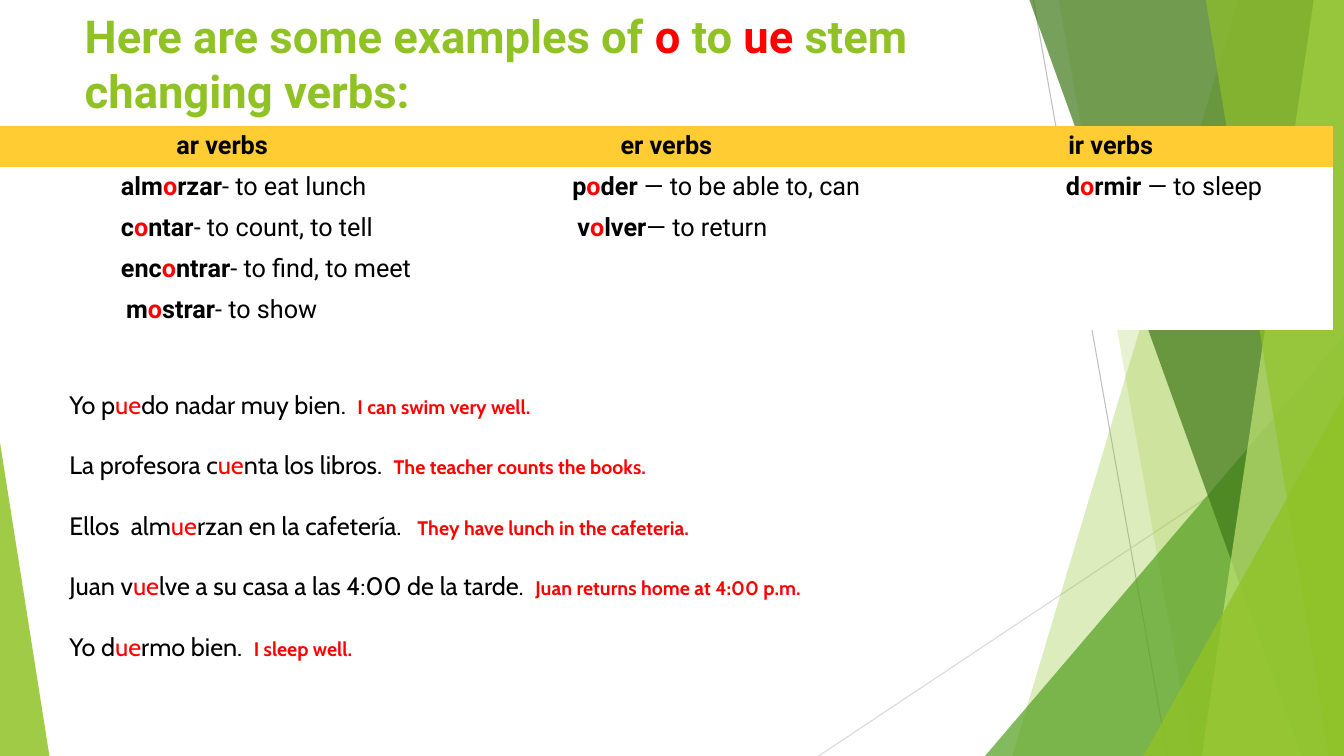
from dataclasses import dataclass

from lxml import etree
from pptx import Presentation
from pptx import util as u
from pptx.dml.color import RGBColor
from pptx.enum import shapes, text
from pptx.oxml.ns import qn

GREEN = RGBColor(0x90, 0xC2, 0x26)
MID_GREEN = RGBColor(0x54, 0xA0, 0x21)
DARK_GREEN = RGBColor(0x3F, 0x78, 0x19)
PALE_GREEN = RGBColor(0xC0, 0xE4, 0x74)
RED = RGBColor(0xFF, 0x00, 0x00)
BLACK = RGBColor(0x00, 0x00, 0x00)
WHITE = RGBColor(0xFF, 0xFF, 0xFF)
AMBER = RGBColor(0xFF, 0xCC, 0x33)
LIGHT_GREY = RGBColor(0xD9, 0xD9, 0xD9)
GREY = RGBColor(0xBF, 0xBF, 0xBF)

WIDTH, HEIGHT = 13.33, 7.5
NO_GRID_STYLE = "{2D5ABB26-0587-4C30-8999-92F81FD0307C}"


@dataclass
class Span:
    text: str
    colour: RGBColor = BLACK
    bold: bool = False
    size: float = 18


@dataclass
class Ray:
    start: tuple[float, float]
    end: tuple[float, float]
    colour: RGBColor


@dataclass
class Band:
    """Area from a slanted left edge to the right side of the slide."""
    top_x: float
    bottom_x: float
    colour: RGBColor
    opacity: int


@dataclass
class Wedge:
    """Right triangle standing on the bottom of the slide."""
    left: float
    top: float
    width: float
    apex: float
    colour: RGBColor
    opacity: int


@dataclass
class Verb:
    before: str
    after: str
    meaning: str
    indent: float


@dataclass
class Sentence:
    before: str
    after: str
    translation: str


RAYS = [Ray((10.25, 0), (11.58, HEIGHT), GREY),
        Ray((WIDTH, 4.03), (8.12, HEIGHT), LIGHT_GREY)]

FACETS = [
    Band(12.28, 10.04, GREEN, 30),
    Band(10.5, 11.83, GREEN, 20),
    Wedge(9.77, 3.33, 3.56, 1, MID_GREEN, 72),
    Band(10.21, 12.91, DARK_GREEN, 70),
    Band(13.03, 11.92, PALE_GREEN, 70),
    Band(11.96, 13.18, GREEN, 65),
    Wedge(11.34, 3.93, 1.99, 1, GREEN, 80),
    Wedge(0, 4.39, 0.49, 0, GREEN, 85),
]

TITLE = [Span("Here are some examples of ", GREEN, True, 32.4),
         Span("o ", RED, True, 32.4),
         Span("to ", GREEN, True, 32.4),
         Span("ue", RED, True, 32.4),
         Span(" stem changing verbs:", GREEN, True, 32.4)]

VERBS = {
    "ar verbs": [Verb("alm", "rzar", "- to eat lunch", 1.2),
                 Verb("c", "ntar", "- to count, to tell", 1.2),
                 Verb("enc", "ntrar", "- to find, to meet", 1.2),
                 Verb("m", "strar", "- to show", 1.25)],
    "er verbs": [Verb("p", "der", " — to be able to, can", 1.27),
                 Verb("v", "lver", "— to return", 1.32)],
    "ir verbs": [Verb("d", "rmir", " — to sleep", 1.76)],
}

SENTENCES = [
    Sentence("Yo p", "do nadar muy bien.  ", "I can swim very well."),
    Sentence("La profesora c", "nta los libros.  ", "The teacher counts the books."),
    Sentence("Ellos  alm", "rzan en la cafetería.  ", " They have lunch in the cafeteria."),
    Sentence("Juan v", "lve a su casa a las 4:00 de la tarde.  ",
             "Juan returns home at 4:00 p.m."),
    Sentence("Yo d", "rmo bien.  ", "I sleep well."),
]


def set_all(target, values: dict) -> None:
    for name, value in values.items():
        setattr(target, name, value)


def write_spans(para, spans: list[Span], font_name: str) -> None:
    for span in spans:
        run = para.add_run()
        run.text = span.text
        set_all(run.font, {"name": font_name, "size": u.Pt(span.size), "bold": span.bold})
        run.font.color.rgb = span.colour


def draw_ray(page, ray: Ray) -> None:
    line = page.shapes.add_connector(
        shapes.MSO_CONNECTOR.STRAIGHT, *map(u.Inches, ray.start + ray.end))
    line.line.color.rgb = ray.colour
    line.line.width = u.Pt(0.75)
    etree.SubElement(line._element.spPr, qn("a:effectLst"))


def draw_facet(page, facet: Band | Wedge) -> None:
    if isinstance(facet, Band):
        builder = page.shapes.build_freeform(u.Inches(facet.top_x), 0)
        corners = [(WIDTH, 0), (WIDTH, HEIGHT), (facet.bottom_x, HEIGHT)]
        builder.add_line_segments([(u.Inches(x), u.Inches(y)) for x, y in corners])
        shape = builder.convert_to_shape()
    else:
        shape = page.shapes.add_shape(
            shapes.MSO_SHAPE.ISOSCELES_TRIANGLE, u.Inches(facet.left), u.Inches(facet.top),
            u.Inches(facet.width), u.Inches(HEIGHT - facet.top))
        shape.adjustments[0] = facet.apex
    shape.shadow.inherit = False
    shape.line.fill.background()
    shape.fill.solid()
    shape.fill.fore_color.rgb = facet.colour
    colour = shape._element.spPr.find(qn("a:solidFill"))[0]
    etree.SubElement(colour, qn("a:alpha"), val=str(facet.opacity * 1000))


def write_title(page) -> None:
    title = page.shapes.title
    set_all(title, {"left": u.Inches(0.74), "top": u.Inches(0),
                    "width": u.Inches(9.4), "height": u.Inches(1.25)})
    set_all(title.text_frame, {"word_wrap": True, "auto_size": text.MSO_AUTO_SIZE.NONE,
                               "vertical_anchor": text.MSO_ANCHOR.MIDDLE})
    para = title.text_frame.paragraphs[0]
    para.alignment = text.PP_ALIGN.LEFT
    write_spans(para, TITLE, "Roboto")


def draw_verb_table(page) -> None:
    row_count = 1 + max(map(len, VERBS.values()))
    frame = page.shapes.add_table(row_count, len(VERBS), u.Inches(0), u.Inches(1.25),
                                  u.Inches(13.22), u.Inches(2.02))
    table = frame.table
    table.horz_banding = False
    frame._element.find(".//" + qn("a:tableStyleId")).text = NO_GRID_STYLE
    for column, (heading, verbs) in enumerate(VERBS.items()):
        for row in range(row_count):
            cell = table.cell(row, column)
            margins = dict.fromkeys(
                ("margin_left", "margin_right", "margin_top", "margin_bottom"), u.Inches(0.05))
            set_all(cell, margins | {"vertical_anchor": text.MSO_ANCHOR.MIDDLE})
            cell.fill.solid()
            cell.fill.fore_color.rgb = WHITE if row else AMBER
            para = cell.text_frame.paragraphs[0]
            if row == 0:
                para.alignment = text.PP_ALIGN.CENTER
                write_spans(para, [Span(heading, bold=True)], "Roboto")
            elif row <= len(verbs):
                verb = verbs[row - 1]
                cell.margin_left = u.Inches(verb.indent)
                write_spans(para, [Span(verb.before, bold=True), Span("o", RED, True),
                                   Span(verb.after, bold=True), Span(verb.meaning)], "Roboto")


def write_sentences(page) -> None:
    box = page.shapes.add_textbox(u.Inches(0.59), u.Inches(3.81),
                                  u.Inches(12.42), u.Inches(2.83))
    box.text_frame.word_wrap = True
    for index, sentence in enumerate(SENTENCES):
        para = box.text_frame.add_paragraph() if index else box.text_frame.paragraphs[0]
        para.space_before = u.Pt(21.6 if index else 0)
        write_spans(para, [Span(sentence.before), Span("ue", RED), Span(sentence.after),
                           Span(sentence.translation, RED, True, 14)], "Cabin")


def main() -> None:
    deck = Presentation()
    set_all(deck, {"slide_width": u.Inches(WIDTH), "slide_height": u.Inches(HEIGHT)})
    page = deck.slides.add_slide(deck.slide_layouts.get_by_name("Title Only"))
    for ray in RAYS:
        draw_ray(page, ray)
    for facet in FACETS:
        draw_facet(page, facet)
    write_title(page)
    draw_verb_table(page)
    write_sentences(page)
    deck.save("out.pptx")


if __name__ == "__main__":
    main()
